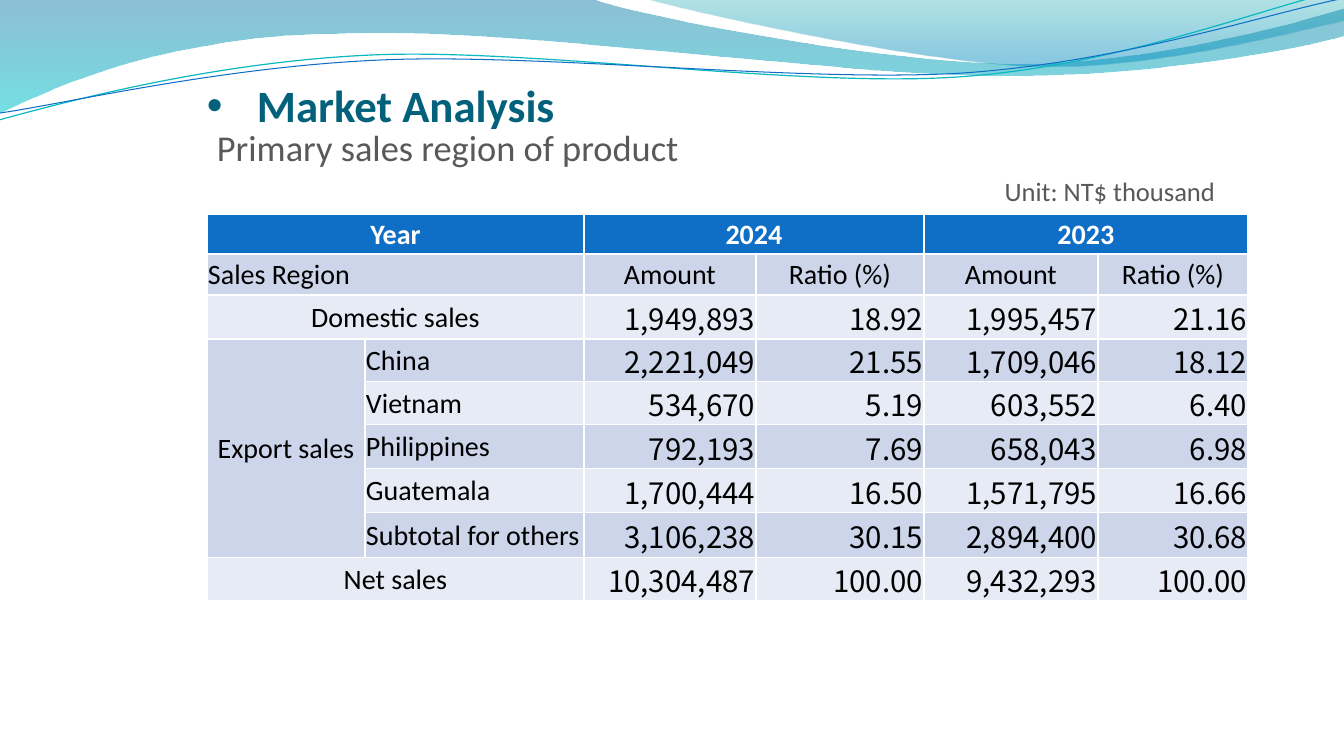
import lxml.etree
import pptx
import pptx.dml.color
import pptx.enum.text
import pptx.oxml.ns
import pptx.util

EMU_PER_PX = 914400 / 100.8
COLORS = {
    "title": "04617B", "body": "595959", "white": "FFFFFF", "black": "000000",
    "header": "0F6FC6", "band_dark": "CCD5EA", "band_light": "E7EBF5",
    "teal_line": "0AB8BF", "blue_line": "0F6FC6", "wave_blue": "0074A1",
    "wave_cyan": "00C6CF", "crest_teal": "00A1A9", "crest_blue": "008BBF",
}
ALIGN = pptx.enum.text.PP_ALIGN
MIDDLE = pptx.enum.text.MSO_ANCHOR.MIDDLE
WAVE = [(0, -1), (592, -1), (639, 17, 892, 64, 1019, 64),
        (1147, 64, 1288, 26, 1344, 9), (1346, 36),
        (1321, 44, 1169, 77, 1002, 76), (836, 76, 513, 28, 346, 34),
        (173, 35, 61, 84, -1, 114), (0, -1)]
CREST = [(644, -1), (684, 11, 916, 62, 1033, 66),
         (1150, 70, 1292, 32, 1344, 21), (1344, 0), (644, -1)]
TEAL_CURVE = [(-1, 120), (65, 102, 213, 62, 372, 55),
              (531, 48, 796, 88, 958, 77), (1119, 66, 1262, 8, 1342, -10)]
BLUE_CURVE = [(0, 113), (64, 104, 220, 67, 381, 60),
              (541, 53, 802, 83, 963, 73), (1124, 62, 1265, 14, 1345, -2)]
COLUMN_WIDTHS = [158, 219, 172, 168, 174, 150]
ROW_HEIGHTS = [40, 41, 44, 43, 43, 44, 44, 45, 43]
SALES = [
    ["Year", "", "2024", "", "2023", ""],
    ["Sales Region", "", "Amount", "Ratio (%)", "Amount", "Ratio (%)"],
    ["Domestic sales", "", "1,949,893", "18.92", "1,995,457", "21.16"],
    ["Export sales", "China", "2,221,049", "21.55", "1,709,046", "18.12"],
    ["", "Vietnam", "534,670", "5.19", "603,552", "6.40"],
    ["", "Philippines", "792,193", "7.69", "658,043", "6.98"],
    ["", "Guatemala", "1,700,444", "16.50", "1,571,795", "16.66"],
    ["", "Subtotal for others", "3,106,238", "30.15", "2,894,400", "30.68"],
    ["Net sales", "", "10,304,487", "100.00", "9,432,293", "100.00"],
]
MERGES = [(0, 0, 0, 1), (0, 2, 0, 3), (0, 4, 0, 5), (1, 0, 1, 1),
          (2, 0, 2, 1), (3, 0, 7, 0), (8, 0, 8, 1)]


def px(length):
    """Turn pixels into EMU."""
    return pptx.util.Emu(round(length * EMU_PER_PX))


def rgb(name):
    """Return the named colour."""
    return pptx.dml.color.RGBColor.from_string(COLORS[name])


def add_xml(parent, tag, **attributes):
    """Append an element with attributes to a parent."""
    return lxml.etree.SubElement(parent, pptx.oxml.ns.qn(tag), attributes)


def write(para, text, size, color, font="Calibri", bold=False,
          align=ALIGN.LEFT, before=0, bullet=None, indent=0):
    """Write one formatted paragraph, with an optional hanging bullet."""
    para.alignment = align
    if before:
        para.space_before = pptx.util.Pt(before)
    if bullet:
        properties = para._p.get_or_add_pPr()
        properties.set("marL", str(px(indent)))
        properties.set("indent", str(-px(indent)))
        add_xml(properties, "a:buFont", typeface="Arial")
        add_xml(properties, "a:buChar", char=bullet)
    span = para.add_run()
    span.text = text
    span.font.size = pptx.util.Pt(size)
    span.font.name = font
    span.font.bold = bold
    span.font.color.rgb = rgb(color)


def bend(shape, segments):
    """Join the line points of each six-number segment into one cubic curve."""
    lines = iter(list(shape._element.iter(pptx.oxml.ns.qn("a:lnTo"))))
    for segment in segments[1:]:
        group = [next(lines) for _ in range(len(segment) // 2)]
        if len(group) == 3:
            curve = lxml.etree.Element(pptx.oxml.ns.qn("a:cubicBezTo"))
            group[0].addprevious(curve)
            for line in group:
                curve.append(line[0])
                line.getparent().remove(line)


def add_outline(page, segments, origin, close):
    """Add a shadowless curved freeform placed from the given origin."""
    points = [(px(segment[i]), px(segment[i + 1])) for segment in segments
              for i in range(0, len(segment), 2)]
    builder = page.shapes.build_freeform(*points[0], scale=1.0)
    builder.add_line_segments(points[1:], close=close)
    shape = builder.convert_to_shape(px(origin[0]), px(origin[1]))
    bend(shape, segments)
    shape.shadow.inherit = False
    return shape


def add_wave(page, segments, origin, stops):
    """Add a wave filled from top to bottom with translucent colours."""
    shape = add_outline(page, segments, origin, True)
    shape.line.fill.background()
    shape.fill.gradient()
    shape.fill.gradient_angle = 270
    for stop, (position, color, _) in zip(shape.fill.gradient_stops, stops):
        stop.position = position
        stop.color.rgb = rgb(color)
    swatches = shape._element.spPr.iter(pptx.oxml.ns.qn("a:srgbClr"))
    for swatch, (_, _, opacity) in zip(swatches, stops):
        add_xml(swatch, "a:alpha", val=str(opacity * 1000))


def add_banner(page, left, top):
    """Draw the waves and thin curves along the top edge."""
    origin = (left, top)
    add_wave(page, WAVE, origin, [(0, "wave_blue", 45), (1, "wave_cyan", 55)])
    add_wave(page, CREST, origin, [(0, "crest_teal", 30), (0.8, "crest_blue", 45)])
    for segments, color, width in [(TEAL_CURVE, "teal_line", 0.85),
                                   (BLUE_CURVE, "blue_line", 0.75)]:
        curve = add_outline(page, segments, origin, False)
        curve.fill.background()
        curve.line.color.rgb = rgb(color)
        curve.line.width = pptx.util.Pt(width)


def add_text_frame(page, left, top, width, height, insets):
    """Add a wrapping text box centred vertically and return its frame."""
    box = page.shapes.add_textbox(px(left), px(top), px(width), px(height))
    frame = box.text_frame
    frame.word_wrap = True
    frame.vertical_anchor = MIDDLE
    (frame.margin_left, frame.margin_top,
     frame.margin_right, frame.margin_bottom) = map(px, insets)
    return frame


def add_heading(page, left, top, width):
    """Place the title, the subtitle and the unit note."""
    title = add_text_frame(page, left, top, width, 89, (0, 5, 0, 0))
    write(title.paragraphs[0], "Market Analysis", 32, "title", bold=True,
          bullet="•", indent=50)
    body = add_text_frame(page, left, top + 60, width + 8, 96, (10, 5, 10, 5))
    write(body.paragraphs[0], "Primary sales region of product", 26, "body")
    write(body.add_paragraph(), "Unit: NT$ thousand", 19, "body",
          align=ALIGN.RIGHT, before=3.8)


def style_cell(cell, row, column, text):
    """Give a table cell its borders, fill, margins and text."""
    properties = cell._tc.get_or_add_tcPr()
    for side in "LRTB":
        heavy = (row, side) in [(0, "B"), (1, "T")]
        border = add_xml(properties, "a:ln" + side,
                         w=str(pptx.util.Pt(1.5 if heavy else 1)))
        add_xml(add_xml(border, "a:solidFill"), "a:srgbClr", val=COLORS["white"])
    cell.fill.solid()
    band = "band_dark" if row % 2 else "band_light"
    cell.fill.fore_color.rgb = rgb("header" if row == 0 else band)
    cell.margin_left = cell.margin_top = cell.margin_right = px(1)
    cell.margin_bottom = 0
    cell.vertical_anchor = MIDDLE
    para = cell.text_frame.paragraphs[0]
    if not text:
        return
    if row > 1 and column > 1:
        write(para, text, 21, "black", font="Noto Sans CJK SC", align=ALIGN.RIGHT)
    else:
        left_aligned = column == 1 or (row, column) == (1, 0)
        write(para, text, 20, "black" if row else "white", bold=row == 0,
              align=ALIGN.LEFT if left_aligned else ALIGN.CENTER)


def add_sales_table(page, left, top):
    """Build the table of sales by region."""
    table = page.shapes.add_table(
        len(ROW_HEIGHTS), len(COLUMN_WIDTHS), px(left), px(top),
        px(sum(COLUMN_WIDTHS)), px(sum(ROW_HEIGHTS))).table
    table.first_row = table.horz_banding = False
    for column, width in zip(table.columns, COLUMN_WIDTHS):
        column.width = px(width)
    for row, height in zip(table.rows, ROW_HEIGHTS):
        row.height = px(height)
    for row, values in enumerate(SALES):
        for column, text in enumerate(values):
            style_cell(table.cell(row, column), row, column, text)
    for top_row, first, bottom_row, last in MERGES:
        table.cell(top_row, first).merge(table.cell(bottom_row, last))


def main():
    """Build the market analysis slide and save it."""
    deck = pptx.Presentation()
    deck.slide_width, deck.slide_height = px(1344), px(756)
    page = deck.slides.add_slide(deck.slide_layouts[6])
    add_banner(page, 0, 0)
    add_heading(page, 207, 58, 1010)
    add_sales_table(page, 207, 214)
    deck.save("out.pptx")


if __name__ == "__main__":
    main()
